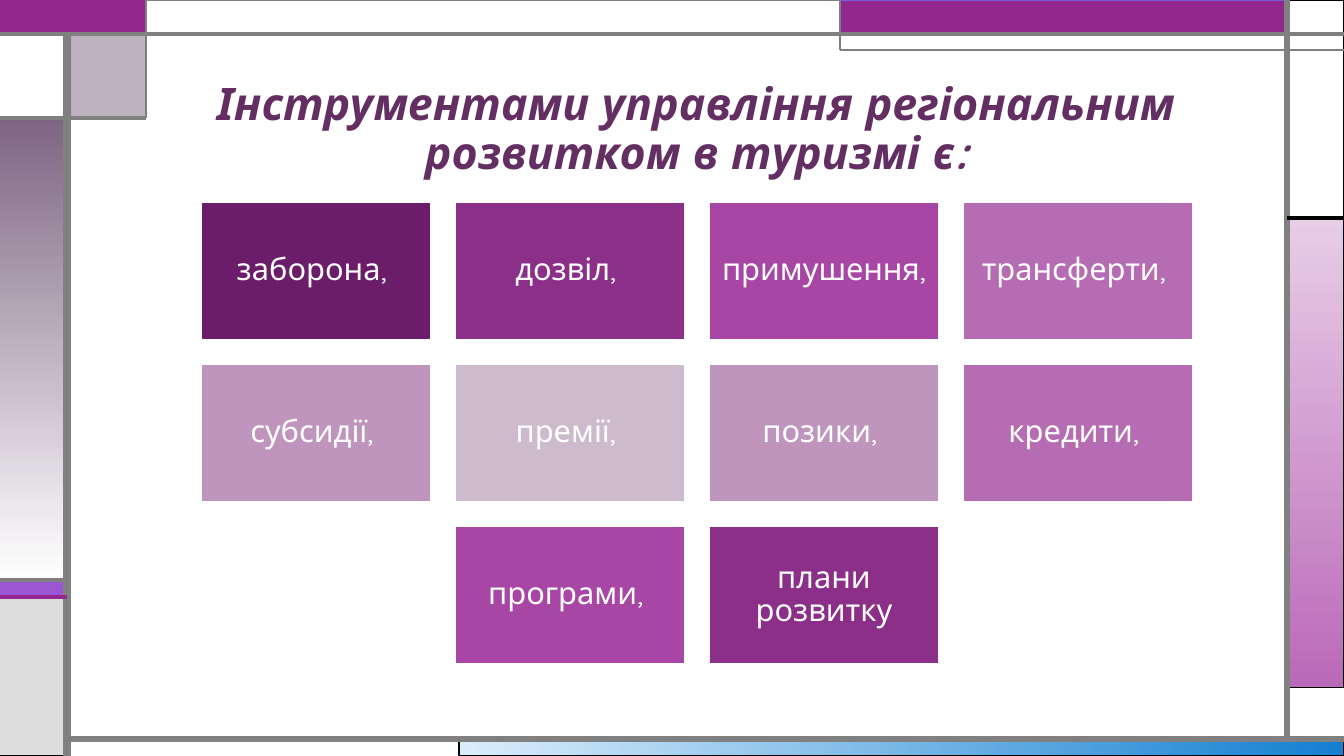
from lxml import etree
from pptx import Presentation
from pptx import util as u
from pptx.dml.color import RGBColor
from pptx.enum import shapes, text
from pptx.oxml import ns

SCALE = 914400 / 100.8  # EMU in one px
WIDTH, HEIGHT = 1344, 756
FONT = "Quicksand"
GRAY, PURPLE, WHITE, BLACK, MAUVE = "808080", "92278F", "FFFFFF", "000000", "7E6583"


def emu(*lengths):
    return [u.Emu(round(length * SCALE)) for length in lengths]


def color(value):
    return RGBColor.from_string(value)


class Page:
    """Style and drawing methods for one slide."""

    def __init__(self, deck):
        self.slide = deck.slides.add_slide(deck.slide_layouts[5])

    def label(self, shape, words, size, ink, anchor, bold=False, italic=False):
        frame = shape.text_frame
        frame.text = words
        frame.word_wrap = True
        frame.auto_size = text.MSO_AUTO_SIZE.NONE
        frame.vertical_anchor = anchor
        paragraph = frame.paragraphs[0]
        paragraph.alignment = text.PP_ALIGN.CENTER
        paragraph.line_spacing = 0.9
        for span in paragraph.runs:
            span.font.name = FONT
            span.font.size = u.Pt(size)
            span.font.bold = bold
            span.font.italic = italic
            span.font.color.rgb = color(ink)

    def title(self, words, *place):
        shape = self.slide.shapes.title
        shape.left, shape.top, shape.width, shape.height = emu(*place)
        self.label(shape, words, 32, "632E62", text.MSO_ANCHOR.BOTTOM, True, True)

    def box(self, place, fill, line=BLACK, weight=0.75, opacity=100):
        shape = self.slide.shapes.add_shape(shapes.MSO_SHAPE.RECTANGLE, *emu(*place))
        shape.shadow.inherit = False
        shape.line.color.rgb = color(line)
        shape.line.width = u.Pt(weight)
        shape.fill.solid()
        shape.fill.fore_color.rgb = color(fill)
        if opacity < 100:
            tint = shape._element.spPr.find(ns.qn("a:solidFill")).find(ns.qn("a:srgbClr"))
            etree.SubElement(tint, ns.qn("a:alpha")).set("val", str(opacity * 1000))
        return shape

    def gradient(self, place, start, end, angle):
        shape = self.box(place, start)
        shape.fill.gradient()
        shape.fill.gradient_angle = angle
        for stop, value in zip(shape.fill.gradient_stops, (start, end)):
            stop.color.rgb = color(value)

    def line(self, ends, weight, ink=GRAY):
        connector = self.slide.shapes.add_connector(
            shapes.MSO_CONNECTOR.STRAIGHT, *emu(*ends))
        connector.line.color.rgb = color(ink)
        connector.line.width = u.Pt(weight)
        etree.SubElement(connector._element.spPr, ns.qn("a:effectLst"))

    def tile(self, place, words, fill):
        shape = self.box(place, fill, WHITE, 1)
        frame = shape.text_frame
        frame.margin_left, frame.margin_top, frame.margin_right, frame.margin_bottom = emu(9, 9, 9, 9)
        self.label(shape, words, 22, WHITE, text.MSO_ANCHOR.MIDDLE)


def draw_frame(page):
    # Edges shared by the frame's panels and rules
    left, right, top, bottom = 67, 1287, 34, 739
    corner_right, corner_bottom, tab_left, tab_bottom = 146, 118, 840, 50
    band_top, band_bottom, step = 580, 597, 218

    # Panels
    page.gradient((459, bottom, WIDTH - 459, HEIGHT - bottom), "DAEDFB", "1480D1", 0)
    page.gradient((right, step, WIDTH - right, 470), "E8CDE7", "BA69B8", 270)
    page.box((0, band_top, left, band_bottom - band_top), "9B57D3")
    page.box((0, band_bottom, left, HEIGHT - band_bottom), "DDDDDD")
    page.box((right, 0, WIDTH - right, step), WHITE)
    page.box((tab_left, 0, right - tab_left, top), PURPLE, "755DD9")
    page.box((left, top, corner_right - left, corner_bottom - top), MAUVE, opacity=50)
    page.gradient((0, corner_bottom, left, band_top - corner_bottom), MAUVE, WHITE, 270)
    page.box((0, top, left, corner_bottom - top), WHITE)
    page.box((0, 0, corner_right, top), PURPLE, PURPLE, 1.5)
    page.box((corner_right, 0, tab_left - corner_right, top), WHITE, GRAY)

    # Rules
    page.line((left, HEIGHT, left, top), 6)
    page.line((left, bottom, WIDTH, bottom), 4.5)
    page.line((right, bottom, right, 0), 4.5)
    page.line((0, top, WIDTH, top), 3)
    page.line((WIDTH, tab_bottom, tab_left, tab_bottom), 1.5)
    page.line((tab_left, tab_bottom, tab_left, 0), 1.5)
    page.line((right, step, WIDTH, step), 2.25, BLACK)
    page.line((corner_right, 0, corner_right, corner_bottom), 1.5)
    page.line((corner_right, corner_bottom, 0, corner_bottom), 2.25)
    page.line((left, band_top, 0, band_top), 2.25)
    page.line((left, band_bottom, 0, band_bottom), 2.25, PURPLE)


def draw_tiles(page):
    # Every row is centred on the same axis
    rows = [
        [("заборона, ", "6C1D6A"), ("дозвіл, ", "8C2F89"),
         ("примушення, ", "A846A5"), ("трансферти, ", "B56CB2")],
        [("субсидії, ", "BF95BD"), ("премії, ", "CDBACC"),
         ("позики, ", "BF95BD"), ("кредити, ", "B56CB2")],
        [("програми, ", "A846A5"), ("плани розвитку", "8C2F89")],
    ]
    center, first_top, width, height, gap = 697, 202, 230, 138, 24
    for row, tiles in enumerate(rows):
        start = center - (len(tiles) * (width + gap) - gap) // 2
        for column, (words, fill) in enumerate(tiles):
            place = (start + column * (width + gap), first_top + row * (height + gap),
                     width, height)
            page.tile(place, words, fill)


def main():
    deck = Presentation()
    deck.slide_width, deck.slide_height = emu(WIDTH, HEIGHT)
    page = Page(deck)
    draw_frame(page)
    page.title("Інструментами управління регіональним розвитком в туризмі є:",
               167, 58, 1058, 126)
    draw_tiles(page)
    deck.save("out.pptx")


if __name__ == "__main__":
    main()
